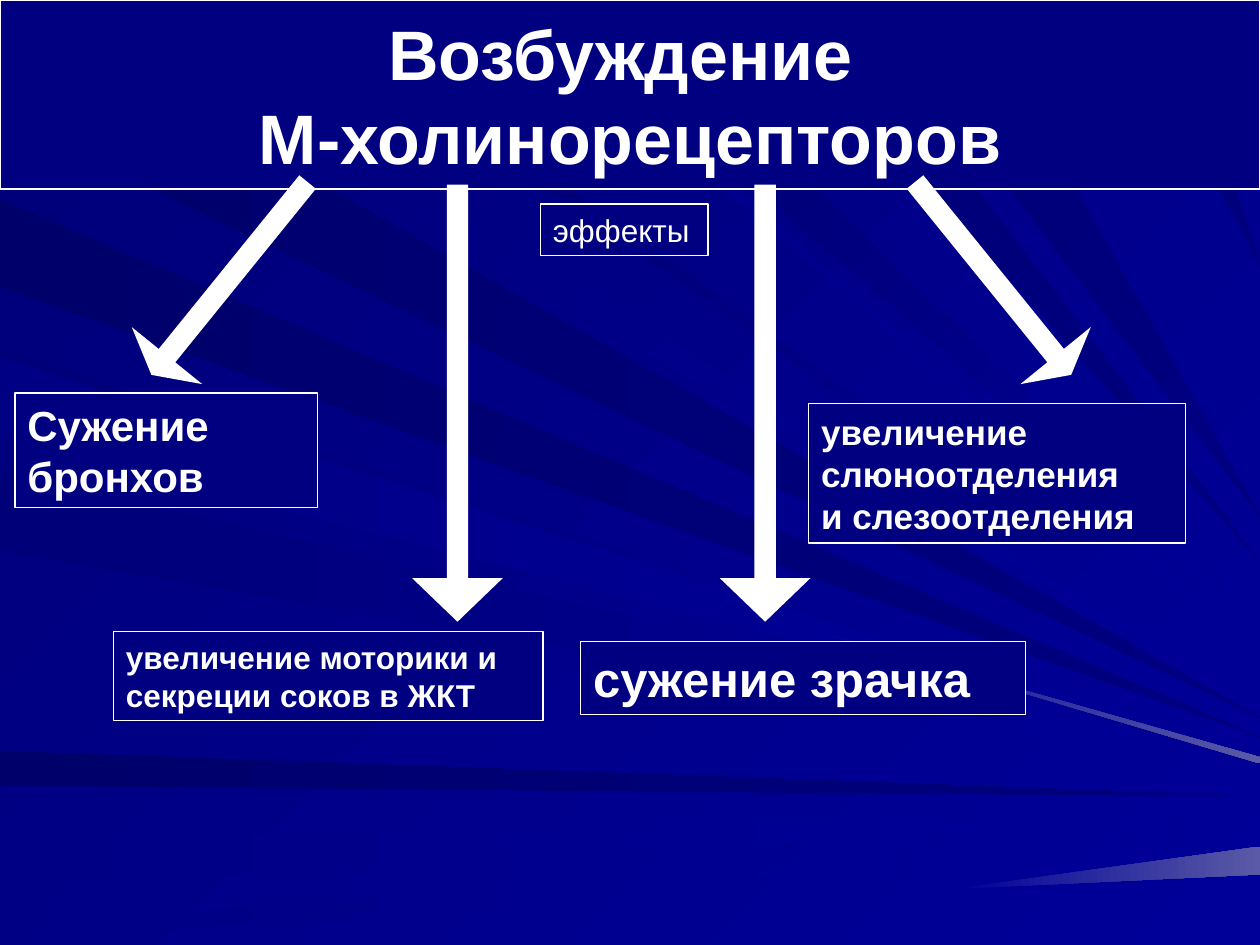
from pptx import Presentation
from pptx.dml.color import RGBColor as Rgb
from pptx.enum.shapes import MSO_SHAPE as Kind
from pptx.enum.text import MSO_ANCHOR as Anchor, MSO_AUTO_SIZE as Fit, PP_ALIGN as Align
from pptx.util import Pt

HUE = {"white": "FFFFFF", "night": "00006B", "dark": "000078", "navy": "000080",
       "deep": "000085", "blue": "000099", "glow": "5A5AA6"}
FONT = "Arial"
WIDE, HIGH = 720, 540

TITLE = ["Возбуждение ", "М-холинорецепторов"]

# left, top, width, height, size, bold, paragraphs
BOXES = [
    (308.9, 116.6, 95.8, 29.5, 18, False, ["эффекты"]),
    (8.6, 224.6, 172.8, 65.5, 24, True, ["Сужение бронхов"]),
    (462.2, 230.4, 215.3, 79.9, 20, True,
     ["увеличение слюноотделения", "и слезоотделения"]),
    (64.8, 360.7, 245.5, 51.1, 18, True,
     ["увеличение моторики и", "секреции соков в ЖКТ"]),
    (331.9, 366.5, 254.2, 41.8, 28, True, ["сужение зрачка"]),
]

# Arrows mirror about this axis: distance to centre, middle, length, turn, head size
AXIS = 349.3
ARROWS = [(87.9, 230.4, 249.8, 0, 0.481), (218.2, 159.1, 141.8, 39, 0.273)]
THICK, SHAFT = 51.8, 0.235

# Rays start on one edge and meet the right edge: start, width, end height, colours
LEFT_RAYS = [
    (1, 66, 410, "night", "navy"),
    (429, 20, 455, "night", "navy"),
    (479, 28, 466, "deep", "blue"),
    (529, 11, 477, "deep", "blue"),
    (114, 50, 421, "night", "navy"),
    (200, 46, 431, "dark", "blue"),
    (269, 46, 436, "dark", "blue"),
    (204, 46, 434, "deep", "blue"),
]
TOP_RAYS = [
    (19, 54, 405, "dark", "blue"),
    (287, 13, 373, "deep", "blue"),
    (307, 47, 355, "night", "blue"),
    (436, 40, 321, "dark", "navy"),
    (639, 31, 151, "night", "navy"),
    (676, 18, 101, "night", "navy"),
    (162, 16, 396, "night", "blue"),
    (494, 60, 295, "dark", "navy"),
]
# Bright wedges widen towards the right edge: tip, upper end, lower end
WEDGES = [((457, 358), 432.7, 436.3), ((545, 508), 483.8, 499.7)]


def paint(fill, first, last=None, turn=0):
    """Fill with one colour, or with a blend at a clockwise angle."""
    if last is None:
        fill.solid()
        fill.fore_color.rgb = Rgb.from_string(HUE[first])
        return
    fill.gradient()
    fill.gradient_angle = (360 - turn) % 360
    for spot, (stop, tone) in enumerate(zip(fill.gradient_stops, (first, last))):
        stop.color.rgb = Rgb.from_string(HUE[tone])
        stop.position = spot


def frame(shape):
    """Navy fill, thin white edge, text centred in height."""
    paint(shape.fill, "navy")
    shape.line.color.rgb = Rgb.from_string(HUE["white"])
    shape.line.width = Pt(0.75)
    shape.shadow.inherit = False
    text = shape.text_frame
    text.word_wrap = True
    text.auto_size = Fit.NONE
    text.vertical_anchor = Anchor.MIDDLE
    return text


def write(para, words, size, bold):
    run = para.add_run()
    run.text = words
    font = run.font
    font.name, font.size, font.bold = FONT, Pt(size), bold
    font.color.rgb = Rgb.from_string(HUE["white"])


def add_ray(shapes, spots, first, last, turn):
    head, *rest = [(Pt(x), Pt(y)) for x, y in spots]
    path = shapes.build_freeform(*head)
    path.add_line_segments(rest, close=True)
    ray = path.convert_to_shape()
    paint(ray.fill, first, last, turn)
    ray.line.fill.background()
    ray.shadow.inherit = False


def add_rays(shapes):
    for start, width, end, *tones in LEFT_RAYS:
        add_ray(shapes, [(0, start), (0, start + width), (WIDE, end)], *tones, 0)
    for start, width, end, *tones in TOP_RAYS:
        add_ray(shapes, [(start, 0), (start + width, 0), (WIDE, end)], *tones, 45)
    for tip, upper, lower in WEDGES:
        add_ray(shapes, [tip, (WIDE, upper), (WIDE, lower)], "blue", "glow", 0)


def add_title(shapes):
    title = shapes.title
    shapes._spTree.append(title._element)  # in front of the rays
    title.left, title.top, title.width, title.height = 0, 0, Pt(WIDE), Pt(108)
    para = frame(title).paragraphs[0]
    para.alignment = Align.CENTER
    for n, words in enumerate(TITLE):
        if n:
            para.add_line_break()
        write(para, words, 40, True)


def add_box(shapes, left, top, wide, high, size, bold, lines):
    box = shapes.add_shape(Kind.RECTANGLE, Pt(left), Pt(top), Pt(wide), Pt(high))
    text = frame(box)
    for n, words in enumerate(lines):
        para = text.add_paragraph() if n else text.paragraphs[0]
        para.alignment = Align.LEFT
        write(para, words, size, bold)


def add_arrows(shapes, gap, middle, length, tilt, head):
    """Add a pair of arrows, one on each side of the axis."""
    for side in (-1, 1):
        left = AXIS + side * gap - length / 2
        arrow = shapes.add_shape(Kind.RIGHT_ARROW, Pt(left), Pt(middle - THICK / 2),
                                 Pt(length), Pt(THICK))
        arrow.rotation = 90 - side * tilt
        arrow.adjustments[0], arrow.adjustments[1] = SHAFT, head
        paint(arrow.fill, "white")
        arrow.line.fill.background()
        arrow.shadow.inherit = False


def main():
    deck = Presentation()
    deck.slide_width, deck.slide_height = Pt(WIDE), Pt(HIGH)
    slide = deck.slides.add_slide(deck.slide_layouts[5])
    paint(slide.background.fill, "dark", "blue", 45)
    shapes = slide.shapes
    add_rays(shapes)
    add_title(shapes)
    for box in BOXES:
        add_box(shapes, *box)
    for pair in ARROWS:
        add_arrows(shapes, *pair)
    deck.save("out.pptx")


if __name__ == "__main__":
    main()
